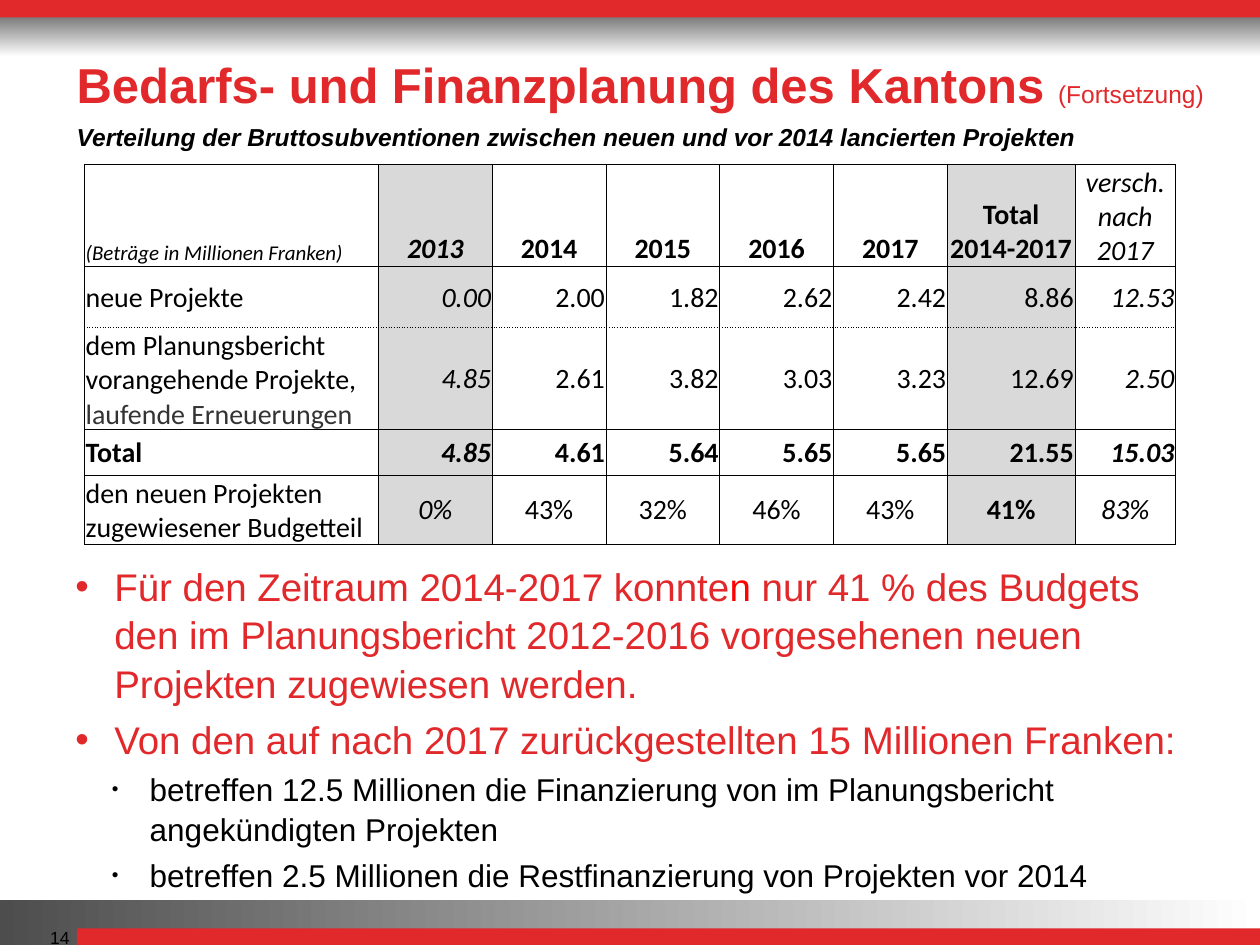
from lxml import etree
from pptx import Presentation
from pptx.dml.color import RGBColor
from pptx.enum.shapes import MSO_SHAPE
from pptx.enum.text import MSO_ANCHOR, PP_ALIGN
from pptx.oxml.ns import qn
from pptx.util import Pt

RECT = MSO_SHAPE.RECTANGLE
MIDDLE, BOTTOM = MSO_ANCHOR.MIDDLE, MSO_ANCHOR.BOTTOM
LEFT, CENTER, RIGHT = PP_ALIGN.LEFT, PP_ALIGN.CENTER, PP_ALIGN.RIGHT

HUES = {"red": "E1282B", "pure": "FF0000", "black": "000000", "dark": "333333",
        "gray": "D9D9D9", "white": "FFFFFF", "top": "5F5F5F", "foot": "4D4D4D"}

# left, top, width, height, hue, gradient angle (None for a plain fill)
BARS = [
    (0, 5, 720, 27.4, "top", 270),
    (0, 0, 720, 10, "red", None),
    (0, 514.5, 720, 25.5, "foot", 0),
    (44, 530.5, 676, 9.5, "red", None),
]
TITLE = [("Bedarfs- und Finanzplanung des Kantons ", 28, True), ("(Fortsetzung)", 14, False)]
SUBTITLE = "Verteilung der Bruttosubventionen zwischen neuen und vor 2014 lancierten Projekten"
NUMBER = "14"

ROWS = [
    ["(Beträge in Millionen Franken)", "2013", "2014", "2015", "2016", "2017",
     "Total 2014-2017", "versch. nach 2017"],
    ["neue Projekte", "0.00", "2.00", "1.82", "2.62", "2.42", "8.86", "12.53"],
    ["dem Planungsbericht vorangehende Projekte,\nlaufende Erneuerungen",
     "4.85", "2.61", "3.82", "3.03", "3.23", "12.69", "2.50"],
    ["Total", "4.85", "4.61", "5.64", "5.65", "5.65", "21.55", "15.03"],
    ["den neuen Projekten zugewiesener Budgetteil",
     "0%", "43%", "32%", "46%", "43%", "41%", "83%"],
]
WIDTHS = [168] + [65] * 5 + [73, 57.5]
HEIGHTS = [58, 35, 58, 26, 39.5]
HEAD, NEW, OLD, SUM, SHARE = range(5)
LABEL, PAST, TOTAL, LATER = 0, 1, 6, 7

# level, runs of (text, hue)
POINTS = [
    (0, [("Für den Zeitraum 2014-2017 konnte", "red"), ("n", "pure"),
         (" nur 41 % des Budgets den im Planungsbericht 2012-2016 vorgesehenen "
          "neuen Projekten zugewiesen werden.", "red")]),
    (0, [("Von den auf nach 2017 zurückgestellten 15 Millionen Franken:", "red")]),
    (1, [("betreffen 12.5 Millionen die Finanzierung von im Planungsbericht "
          "angekündigten Projekten", "black")]),
    (1, [("betreffen 2.5 Millionen die Restfinanzierung von Projekten vor 2014", "black")]),
]
# size, left margin, hanging indent, bullet size in percent
LEVELS = [(22, 58.3, 22.3, 100), (18, 78.5, 21.6, 60)]


def rgb(hue):
    return RGBColor.from_string(HUES[hue])


def style(run, size, hue="black", bold=False, slant=False, face="Arial"):
    font = run.font
    font.name, font.size, font.bold, font.italic = face, Pt(size), bold, slant
    font.color.rgb = rgb(hue)


def add_bar(slide, left, top, width, height, hue, angle):
    bar = slide.shapes.add_shape(RECT, Pt(left), Pt(top), Pt(width), Pt(height))
    bar.shadow.inherit = False
    bar.line.fill.background()
    if angle is None:
        bar.fill.solid()
        bar.fill.fore_color.rgb = rgb(hue)
        return
    bar.fill.gradient()
    bar.fill.gradient_angle = angle
    for stop, tone in zip(bar.fill.gradient_stops, (hue, "white")):
        stop.color.rgb = rgb(tone)


def add_box(slide, left, top, width, height):
    box = slide.shapes.add_textbox(Pt(left), Pt(top), Pt(width), Pt(height))
    box.text_frame.word_wrap = True
    return box.text_frame


def add_run(para, text, *args, **kwargs):
    run = para.add_run()
    run.text = text
    style(run, *args, **kwargs)


def set_edges(cell, row):
    props = cell._tc.get_or_add_tcPr()
    dots = {NEW: "lnB", OLD: "lnT"}.get(row)
    for spot, tag in enumerate(("lnL", "lnR", "lnT", "lnB")):
        line = etree.Element(qn("a:" + tag), w=str(Pt(0.5)))
        fill = etree.SubElement(line, qn("a:solidFill"))
        etree.SubElement(fill, qn("a:srgbClr"), val=HUES["black"])
        dash = "sysDot" if tag == dots else "solid"
        etree.SubElement(line, qn("a:prstDash"), val=dash)
        props.insert(spot, line)


def fill_cell(cell, row, col, text):
    cell.margin_left = cell.margin_right = cell.margin_top = Pt(0.7)
    cell.margin_bottom = 0
    cell.vertical_anchor = BOTTOM if row == HEAD else MIDDLE
    if col in (PAST, TOTAL):
        cell.fill.solid()
        cell.fill.fore_color.rgb = rgb("gray")
    else:
        cell.fill.background()
    set_edges(cell, row)

    corner = row == HEAD and col == LABEL
    bold = (row == SUM or (row == HEAD and col not in (LABEL, LATER))
            or (row, col) == (SHARE, TOTAL))
    slant = corner or col in (PAST, LATER)
    side = LEFT if col == LABEL else CENTER if row in (HEAD, SHARE) else RIGHT
    cell.text_frame.text = text
    for spot, para in enumerate(cell.text_frame.paragraphs):
        para.alignment = side
        style(para.runs[0], 12 if corner else 16, "dark" if spot else "black",
              bold, slant, "Calibri")


def add_grid(slide):
    frame = slide.shapes.add_table(len(ROWS), len(WIDTHS), Pt(48.3), Pt(94),
                                   Pt(sum(WIDTHS)), Pt(sum(HEIGHTS)))
    table = frame.table
    table.first_row = table.horz_banding = False
    for col, width in enumerate(WIDTHS):
        table.columns[col].width = Pt(width)
    for row, texts in enumerate(ROWS):
        table.rows[row].height = Pt(HEIGHTS[row])
        for col, text in enumerate(texts):
            fill_cell(table.cell(row, col), row, col, text)


def add_points(slide):
    frame = add_box(slide, 0, 316.8, 705.6, 181.4)
    frame.margin_right = Pt(14)
    for spot, (level, runs) in enumerate(POINTS):
        para = frame.add_paragraph() if spot else frame.paragraphs[0]
        size, left, hang, scale = LEVELS[level]
        props = para._p.get_or_add_pPr()
        props.set("marL", str(Pt(left)))
        props.set("indent", str(-Pt(hang)))
        etree.SubElement(props, qn("a:buSzPct"), val=str(scale * 1000))
        etree.SubElement(props, qn("a:buFont"), typeface="Arial")
        etree.SubElement(props, qn("a:buChar"), char="•")
        para.line_spacing = 1.05
        if spot:
            para.space_before = Pt(size * 0.2)
        for text, hue in runs:
            add_run(para, text, size, hue)


def main():
    deck = Presentation()
    deck.slide_width, deck.slide_height = Pt(720), Pt(540)
    slide = deck.slides.add_slide(deck.slide_layouts[6])
    for bar in BARS:
        add_bar(slide, *bar)
    add_points(slide)

    para = add_box(slide, 13, 526.3, 33.8, 19.4).paragraphs[0]
    para.alignment = RIGHT
    add_run(para, NUMBER, 10)

    title = add_box(slide, 36.7, 31, 663, 38)
    title.margin_top = 0
    for text, size, bold in TITLE:
        add_run(title.paragraphs[0], text, size, "red", bold)

    para = add_box(slide, 36.7, 66.2, 602, 24.5).paragraphs[0]
    add_run(para, SUBTITLE, 14, bold=True, slant=True)
    add_grid(slide)
    deck.save("out.pptx")


if __name__ == "__main__":
    main()
